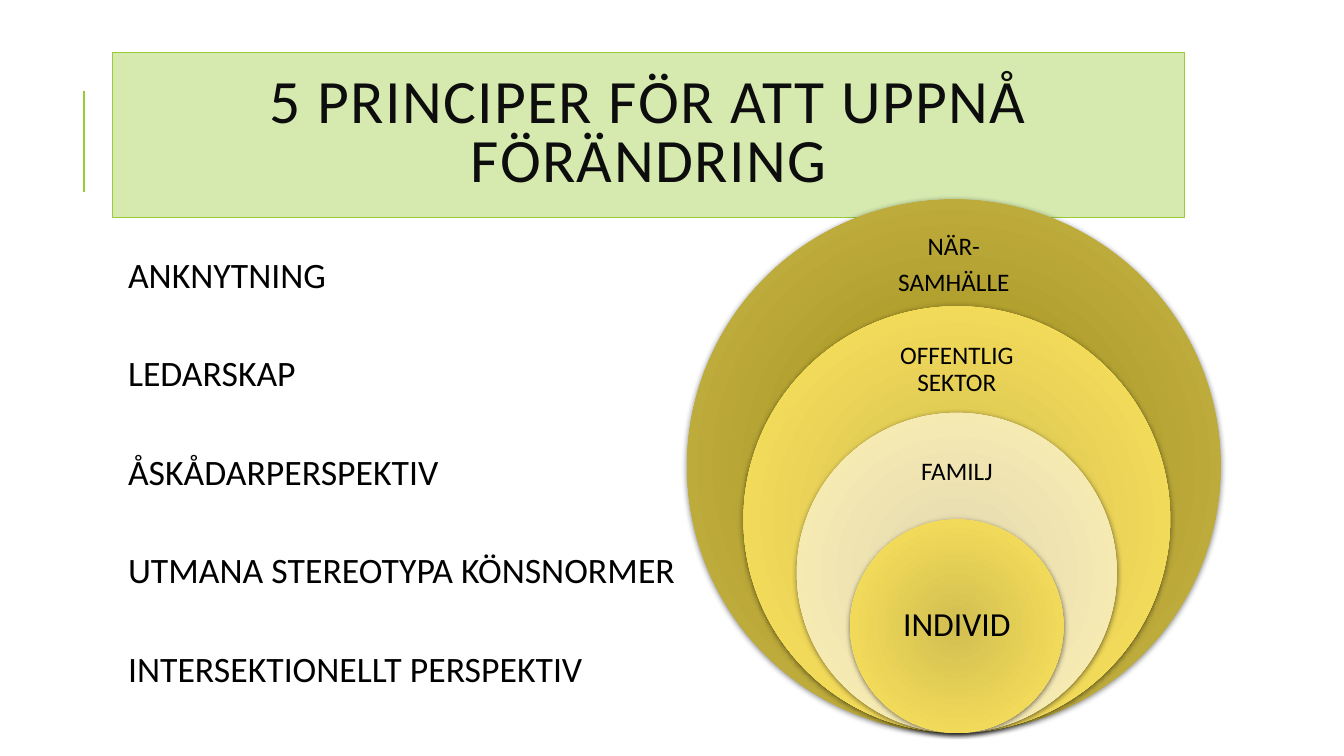
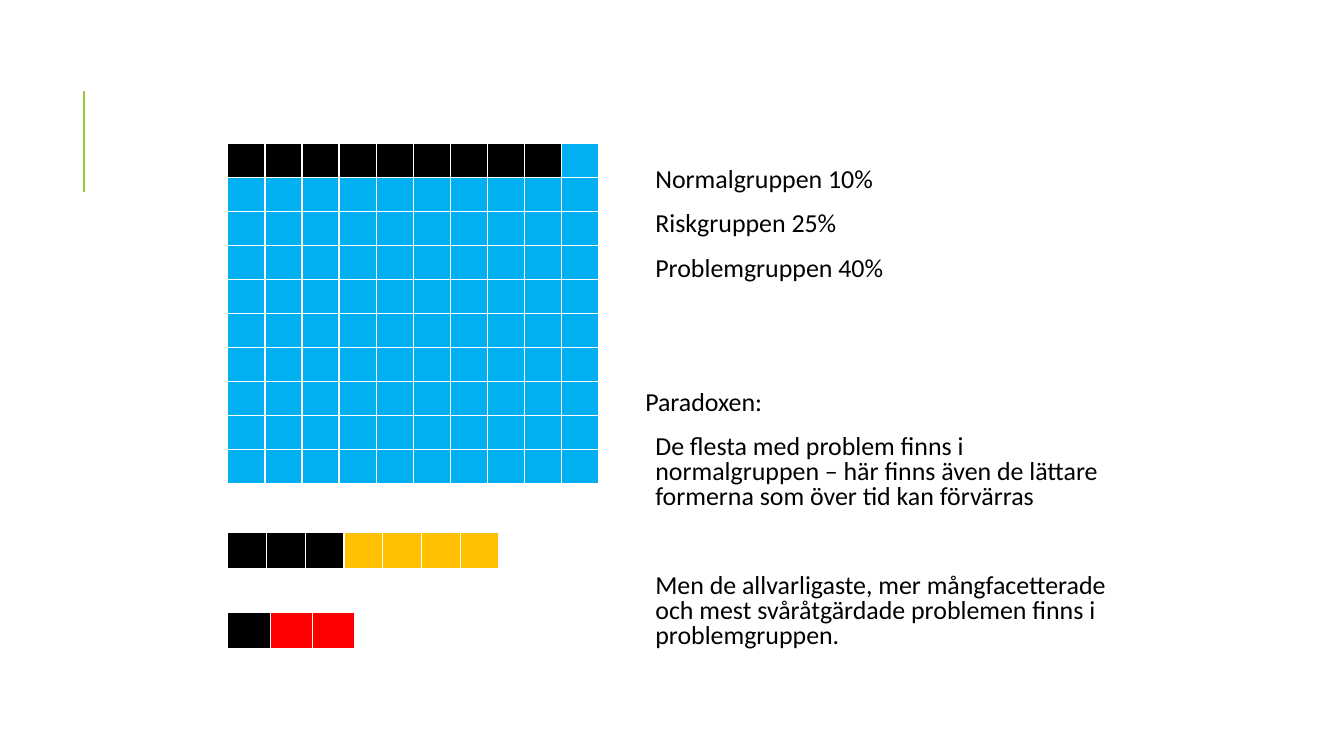
from pptx import Presentation, util as u
from pptx.dml.color import RGBColor
from pptx.enum import shapes, text
from pptx.oxml import parse_xml
from pptx.oxml.ns import nsdecls

FONT = "Calibri"
HUES = {"green": "99CB38", "pale": "D6EAAF", "ink": "0D0D0D", "black": "000000",
        "white": "FFFFFF", "blue": "00B0F0", "amber": "FFC000", "red": "FF0000"}
GOLD = ("D2BF51", "FFE55D")
OLIVE = ("9F8F19", "CAB64A")
CREAM = ("E1D7AD", "FFF2B6")

TITLE = "5 PRINCIPER FÖR ATT UPPNÅ FÖRÄNDRING"
GOALS = [("ANKNYTNING", 0.1, 12), ("LEDARSKAP", 0.1, 47), ("ÅSKÅDARPERSPEKTIV", 0.1, 47),
         ("UTMANA STEREOTYPA KÖNSNORMER", 0.1, 47),
         ("INTERSEKTIONELLT PERSPEKTIV", 0.1, 47)]
FACTS = [("Normalgruppen 10%", 0.1, 12), ("Riskgruppen 25%", 0.1, 12),
         ("Problemgruppen 40%", 0.1, 12), ("Paradoxen:", 0, 76),
         ("De flesta med problem finns i normalgruppen – här finns även de lättare "
          "formerna som över tid kan förvärras", 0.1, 12),
         ("Men de allvarligaste, mer mångfacetterade och mest svåråtgärdade problemen "
          "finns i problemgruppen.", 0.1, 44)]
# label, gradient, centre, label top, label height, inset, size
RINGS = [("NÄR-\nSAMHÄLLE", OLIVE, 9.46, 2.24, 0.79, 0.14, 18),
         ("OFFENTLIG SEKTOR", GOLD, 9.49, 3.29, 0.76, 0.14, 18),
         ("FAMILJ", CREAM, 9.49, 4.33, 0.71, 0.14, 18),
         ("INDIVID", GOLD, 9.49, 5.68, 1.06, 0.19, 24)]
GRIDS = [(1.42, 3.68, 3.38, 10, 10, 9, "blue"),
         (5.28, 2.69, 0.36, 1, 7, 3, "amber"),
         (6.08, 1.26, 0.35, 1, 3, 1, "red")]


def rgb(name):
    return RGBColor.from_string(HUES[name])


def place(shape, *box):
    shape.left, shape.top, shape.width, shape.height = map(u.Inches, box)


def pad(frame, gap):
    frame.margin_left = frame.margin_right = u.Inches(gap)
    frame.margin_top = frame.margin_bottom = u.Inches(gap)


def style(para, size, hue, lead):
    para.line_spacing = lead
    for run in para.runs:
        run.font.name, run.font.size = FONT, u.Pt(size)
        run.font.color.rgb = rgb(hue)


def start(deck):
    slide = deck.slides.add_slide(deck.slide_layouts[1])
    x = u.Inches(0.83)
    bar = slide.shapes.add_connector(shapes.MSO_CONNECTOR.STRAIGHT,
                                     x, u.Inches(1.9), x, u.Inches(0.9))
    bar.line.color.rgb, bar.line.width = rgb("green"), u.Pt(1.5)
    bar._element.spPr.append(parse_xml(f"<a:effectLst {nsdecls('a')}/>"))
    return slide


def head(shape):
    place(shape, 1.12, 0.52, 10.63, 1.64)
    shape.fill.solid()
    shape.fill.fore_color.rgb = rgb("pale")
    shape.line.color.rgb, shape.line.width = rgb("green"), u.Pt(0.75)
    frame = shape.text_frame
    frame.text = TITLE
    frame.auto_size = text.MSO_AUTO_SIZE.NONE
    frame.vertical_anchor = text.MSO_ANCHOR.MIDDLE
    para = frame.paragraphs[0]
    para.alignment = text.PP_ALIGN.CENTER
    style(para, 44, "ink", 0.8)
    para.runs[0].font._element.set("spc", "100")


def fill_list(shape, box, items, size, lead):
    place(shape, *box)
    frame = shape.text_frame
    frame.text = "\n".join(item[0] for item in items)
    frame.auto_size = text.MSO_AUTO_SIZE.NONE
    pad(frame, 0.05)
    for para, (_, left, gap) in zip(frame.paragraphs, items):
        style(para, size, "black", lead)
        para.space_before, para.space_after = u.Pt(gap), u.Pt(2)
        props = para._p.get_or_add_pPr()
        props.set("marL", str(u.Inches(left)))
        props.set("indent", "0")
        props.append(parse_xml(f"<a:buNone {nsdecls('a')}/>"))


def draw_ring(slide, step, label, shades, mid, top, high, inset, size):
    side = 5.29 * (1 - step / 5)
    box = (mid - side / 2, 7.27 - side, side, side)
    disc = slide.shapes.add_shape(shapes.MSO_SHAPE.OVAL, *map(u.Inches, box))
    props = disc._element.spPr
    stops = "".join(f'<a:gs pos="{pos}"><a:srgbClr val="{hue}"/></a:gs>'
                    for pos, hue in zip((0, 100000), shades))
    props.append(parse_xml(
        f'<a:gradFill {nsdecls("a")} rotWithShape="1"><a:gsLst>{stops}</a:gsLst>'
        '<a:path path="circle"><a:fillToRect l="100000" t="100000" r="100000" b="100000"/>'
        '</a:path></a:gradFill>'))
    props.append(parse_xml(
        f'<a:effectLst {nsdecls("a")}><a:outerShdw blurRad="{u.Pt(4)}" dist="{u.Pt(1)}" '
        'dir="5400000" rotWithShape="0"><a:srgbClr val="000000"><a:alpha val="50000"/>'
        '</a:srgbClr></a:outerShdw></a:effectLst>'))
    disc.line.fill.background()
    note = slide.shapes.add_textbox(*map(u.Inches, (mid - 0.74, top, 1.48, high)))
    frame = note.text_frame
    frame.text = label
    frame.word_wrap = True
    frame.vertical_anchor = text.MSO_ANCHOR.MIDDLE
    pad(frame, inset)
    for para in frame.paragraphs:
        para.alignment = text.PP_ALIGN.CENTER
        para.space_after = u.Pt(size * 0.35)
        style(para, size, "black", 0.9)


def draw_grid(slide, top, wide, high, rows, cols, dark, hue):
    box = map(u.Inches, (2.26, top, wide, high))
    table = slide.shapes.add_table(rows, cols, *box).table
    for num, cell in enumerate(table.iter_cells()):
        cell.margin_left = cell.margin_right = cell.margin_top = cell.margin_bottom = 0
        cell.fill.solid()
        cell.fill.fore_color.rgb = rgb("black" if num < dark else hue)
        props = cell._tc.get_or_add_tcPr()
        for pos, edge in enumerate("LRTB"):
            props.insert(pos, parse_xml(
                f'<a:ln{edge} {nsdecls("a")} w="{u.Pt(1)}"><a:solidFill>'
                f'<a:srgbClr val="{HUES["white"]}"/></a:solidFill></a:ln{edge}>'))


def main():
    deck = Presentation()
    deck.slide_width, deck.slide_height = u.Inches(13.33), u.Inches(7.5)

    slide = start(deck)
    head(slide.shapes.title)
    fill_list(slide.placeholders[1], (1.12, 2.57, 10.27, 4.72), GOALS, 25.5, 0.7)
    for step, ring in enumerate(RINGS):
        draw_ring(slide, step, *ring)

    slide = start(deck)
    title = slide.shapes.title._element
    title.getparent().remove(title)
    fill_list(slide.placeholders[1], (6.35, 1.62, 4.75, 5.13), FACTS, 18.5, 0.8)
    for grid in GRIDS:
        draw_grid(slide, *grid)

    deck.save("out.pptx")


if __name__ == "__main__":
    main()
